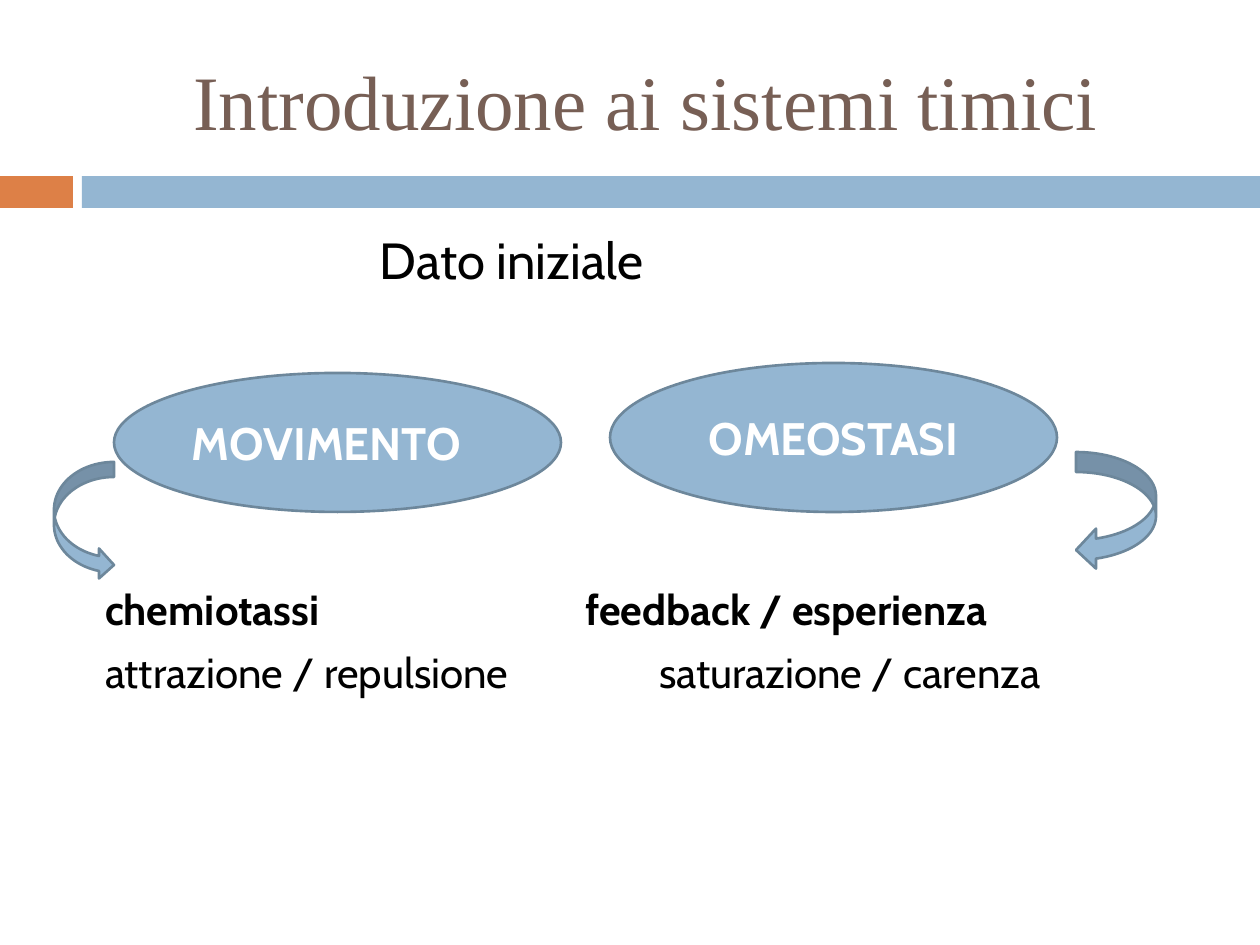
from dataclasses import dataclass

from pptx import Presentation
from pptx.dml.color import RGBColor
from pptx.enum.shapes import MSO_SHAPE
from pptx.enum.text import MSO_ANCHOR, PP_ALIGN
from pptx.util import Inches, Pt


@dataclass(frozen=True)
class Theme:
    """Colours, fonts and type sizes of the slide."""
    blue: str = "94B6D2"
    outline: str = "6D879B"
    orange: str = "DD8047"
    brown: str = "775F55"
    black: str = "000000"
    white: str = "FFFFFF"
    heading_font: str = "Times New Roman"
    body_font: str = "Cabin"
    title_size: int = 44
    lead_size: int = 29
    concept_size: int = 26
    detail_size: int = 24


THEME = Theme()


def px(length):
    """Turn pixels into EMU at 126 pixels to the inch."""
    return round(length * Inches(1) / 126)


def write(paragraph, text, *, size, font=THEME.body_font, color=THEME.black,
          bold=False, align=PP_ALIGN.LEFT, indent=0, after=0):
    """Put one formatted run into a paragraph."""
    paragraph.alignment = align
    paragraph.space_before = Pt(0)
    paragraph.space_after = Pt(after)
    paragraph._p.get_or_add_pPr().set("marL", str(px(indent)))
    run = paragraph.add_run()
    run.text = text
    run.font.name = font
    run.font.size = Pt(size)
    run.font.bold = bold
    run.font.color.rgb = RGBColor.from_string(color)


def set_frame(frame, anchor=MSO_ANCHOR.TOP, right=0):
    """Wrap a text frame, with no margins but the right one."""
    frame.word_wrap = True
    frame.vertical_anchor = anchor
    frame.margin_left = frame.margin_top = frame.margin_bottom = 0
    frame.margin_right = px(right)


def add_title(slide, text, left, top, width, height):
    """Place and fill the title placeholder."""
    title = slide.shapes.title
    title.left, title.top, title.width, title.height = map(
        px, (left, top, width, height))
    set_frame(title.text_frame, MSO_ANCHOR.MIDDLE)
    write(title.text_frame.paragraphs[0], text, size=THEME.title_size,
          font=THEME.heading_font, color=THEME.brown, align=PP_ALIGN.CENTER)


def add_figure(slide, kind, box, fill=THEME.blue, outline=None):
    """Draw a flat preset shape."""
    figure = slide.shapes.add_shape(kind, *map(px, box))
    figure.shadow.inherit = False
    figure.fill.solid()
    figure.fill.fore_color.rgb = RGBColor.from_string(fill)
    if outline:
        figure.line.color.rgb = RGBColor.from_string(outline)
        figure.line.width = Pt(1.5)
    else:
        figure.line.fill.background()
    return figure


def add_concept(slide, text, box, right=0):
    """Draw an ellipse with its concept name."""
    ellipse = add_figure(slide, MSO_SHAPE.OVAL, box, outline=THEME.outline)
    set_frame(ellipse.text_frame, MSO_ANCHOR.MIDDLE, right)
    write(ellipse.text_frame.paragraphs[0], text, size=THEME.concept_size,
          color=THEME.white, bold=True, align=PP_ALIGN.CENTER)


def add_text(slide, box):
    """Add an empty text box and return its frame."""
    frame = slide.shapes.add_textbox(*map(px, box)).text_frame
    set_frame(frame)
    return frame


def add_detail(slide, heading, detail, box, indent=0):
    """Write a bold heading with its detail below."""
    frame = add_text(slide, box)
    write(frame.paragraphs[0], heading, size=THEME.detail_size,
          bold=True, after=7)
    write(frame.add_paragraph(), detail, size=THEME.detail_size, indent=indent)


def main():
    """Build and save the slide."""
    deck = Presentation()
    deck.slide_width, deck.slide_height = px(1260), px(945)
    slide = deck.slides.add_slide(deck.slide_layouts[5])

    add_figure(slide, MSO_SHAPE.RECTANGLE, (0, 176, 73, 32), THEME.orange)
    add_figure(slide, MSO_SHAPE.RECTANGLE, (82, 176, 1178, 32))
    add_title(slide, "Introduzione ai sistemi timici", 84, 32, 1124, 136)

    lead = add_text(slide, (380, 229, 400, 62))
    write(lead.paragraphs[0], "Dato iniziale", size=THEME.lead_size)

    add_concept(slide, "MOVIMENTO", (114, 373, 447, 139), right=22)
    add_concept(slide, "OMEOSTASI", (610, 363, 447, 149))
    for kind, box in (
        (MSO_SHAPE.CURVED_RIGHT_ARROW, (54, 462, 60, 118)),
        (MSO_SHAPE.CURVED_LEFT_ARROW, (1076, 452, 80, 118)),
    ):
        add_figure(slide, kind, box, outline=THEME.outline)

    add_detail(slide, "chemiotassi", "attrazione / repulsione",
               (105, 584, 450, 116))
    add_detail(slide, "feedback / esperienza", "saturazione / carenza",
               (585, 584, 560, 116), indent=74)
    deck.save("out.pptx")


if __name__ == "__main__":
    main()
